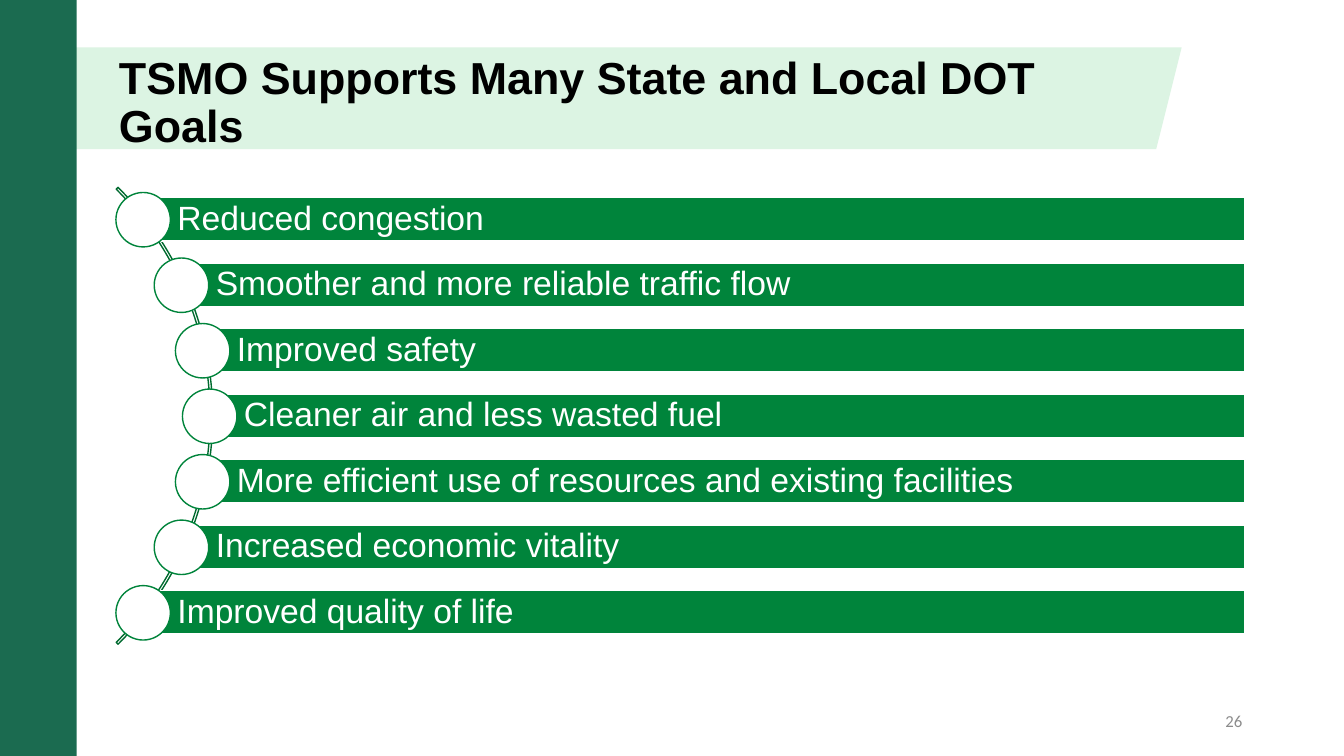
import math

import pptx
import pptx.dml.color
import pptx.enum.shapes
import pptx.enum.text
import pptx.util

RGBColor = pptx.dml.color.RGBColor
Shape = pptx.enum.shapes.MSO_SHAPE
Anchor = pptx.enum.text.MSO_ANCHOR
Align = pptx.enum.text.PP_ALIGN

BLACK = RGBColor(0x00, 0x00, 0x00)
WHITE = RGBColor(0xFF, 0xFF, 0xFF)
GREY = RGBColor(0x8C, 0x8C, 0x8C)
MINT = RGBColor(0xDC, 0xF4, 0xE3)
FOREST = RGBColor(0x1B, 0x6B, 0x50)
GREEN = RGBColor(0x00, 0x84, 0x3B)
DARK_GREEN = RGBColor(0x00, 0x6A, 0x2F)

GOALS = [
    "Reduced congestion",
    "Smoother and more reliable traffic flow",
    "Improved safety",
    "Cleaner air and less wasted fuel",
    "More efficient use of resources and existing facilities",
    "Increased economic vitality",
    "Improved quality of life",
]


def px(length):
    """Turn px, 100 to the inch, into EMU."""
    return pptx.util.Emu(length * 9144)


class SlideBuilder:
    font = "Arial"

    def __init__(self, deck):
        self.page = deck.slides.add_slide(deck.slide_layouts[5])

    def shape(self, kind, left, top, width, height, fill=None, line=None):
        shape = self.page.shapes.add_shape(
            kind, px(left), px(top), px(width), px(height))
        shape.shadow.inherit = False
        if fill is None:
            shape.fill.background()
        else:
            shape.fill.solid()
            shape.fill.fore_color.rgb = fill
        if line is None:
            shape.line.fill.background()
        else:
            shape.line.color.rgb = line
            shape.line.width = pptx.util.Pt(1)
        return shape

    def fill_text(self, box, text, size, color, font=None, bold=False,
                  align=Align.LEFT, anchor=Anchor.MIDDLE, spacing=0.9,
                  insets=(10, 5, 10, 5)):
        frame = box.text_frame
        frame.word_wrap = True
        frame.auto_size = pptx.enum.text.MSO_AUTO_SIZE.NONE
        frame.vertical_anchor = anchor
        (frame.margin_left, frame.margin_top,
         frame.margin_right, frame.margin_bottom) = map(px, insets)
        para = frame.paragraphs[0]
        para.alignment = align
        para.line_spacing = spacing
        span = para.add_run()
        span.text = text
        span.font.name = font or self.font
        span.font.size = pptx.util.Pt(size)
        span.font.bold = bold
        span.font.color.rgb = color

    def title(self, text, left, top, width, height):
        title = self.page.shapes.title
        title.left, title.top = px(left), px(top)
        title.width, title.height = px(width), px(height)
        self.fill_text(title, text, 32, BLACK, bold=True, anchor=Anchor.TOP)
        # Bring the title in front of the bands
        title.element.getparent().append(title.element)

    def text(self, text, left, top, width, height, size, color, **style):
        box = self.page.shapes.add_textbox(
            px(left), px(top), px(width), px(height))
        self.fill_text(box, text, size, color, **style)

    def goal_list(self, goals, middle_x, middle_y, radius, pitch, right):
        bar_height, dot_size = 43, 54
        # Thin arc that the dots sit on
        arc = self.shape(Shape.BLOCK_ARC, -430, 92, 641, 641, line=DARK_GREEN)
        for index, value in enumerate((189, 27, 0.004)):
            arc.adjustments[index] = value
        # One bar and one dot for each goal
        for index, goal in enumerate(goals):
            drop = (index - len(goals) // 2) * pitch
            x = middle_x - radius + round(math.sqrt(radius**2 - drop**2))
            y = middle_y + drop
            bar = self.shape(Shape.RECTANGLE, x, y - bar_height // 2 - 1,
                             right - x, bar_height, GREEN, WHITE)
            self.fill_text(bar, goal, 24, WHITE, insets=(34, 7, 7, 7))
            self.shape(Shape.OVAL, x - dot_size // 2, y - dot_size // 2,
                       dot_size, dot_size, WHITE, GREEN)


def main():
    deck = pptx.Presentation()
    deck.slide_width, deck.slide_height = px(1333), px(750)
    slide = SlideBuilder(deck)

    # Title band and side band
    slide.shape(Shape.PARALLELOGRAM, 24, 47, 1148, 101, MINT)
    slide.shape(Shape.RECTANGLE, 0, 0, 76, 750, FOREST)
    slide.title("TSMO Supports Many State and Local DOT Goals",
                108, 50, 984, 55)

    # Goals along the arc
    slide.goal_list(GOALS, middle_x=208, middle_y=413, radius=320,
                    pitch=65, right=1235)

    # Page number
    slide.text("26", 942, 695, 300, 40, 12, GREY, font="Calibri",
               align=Align.RIGHT, spacing=1.0)

    deck.save("out.pptx")


if __name__ == "__main__":
    main()
